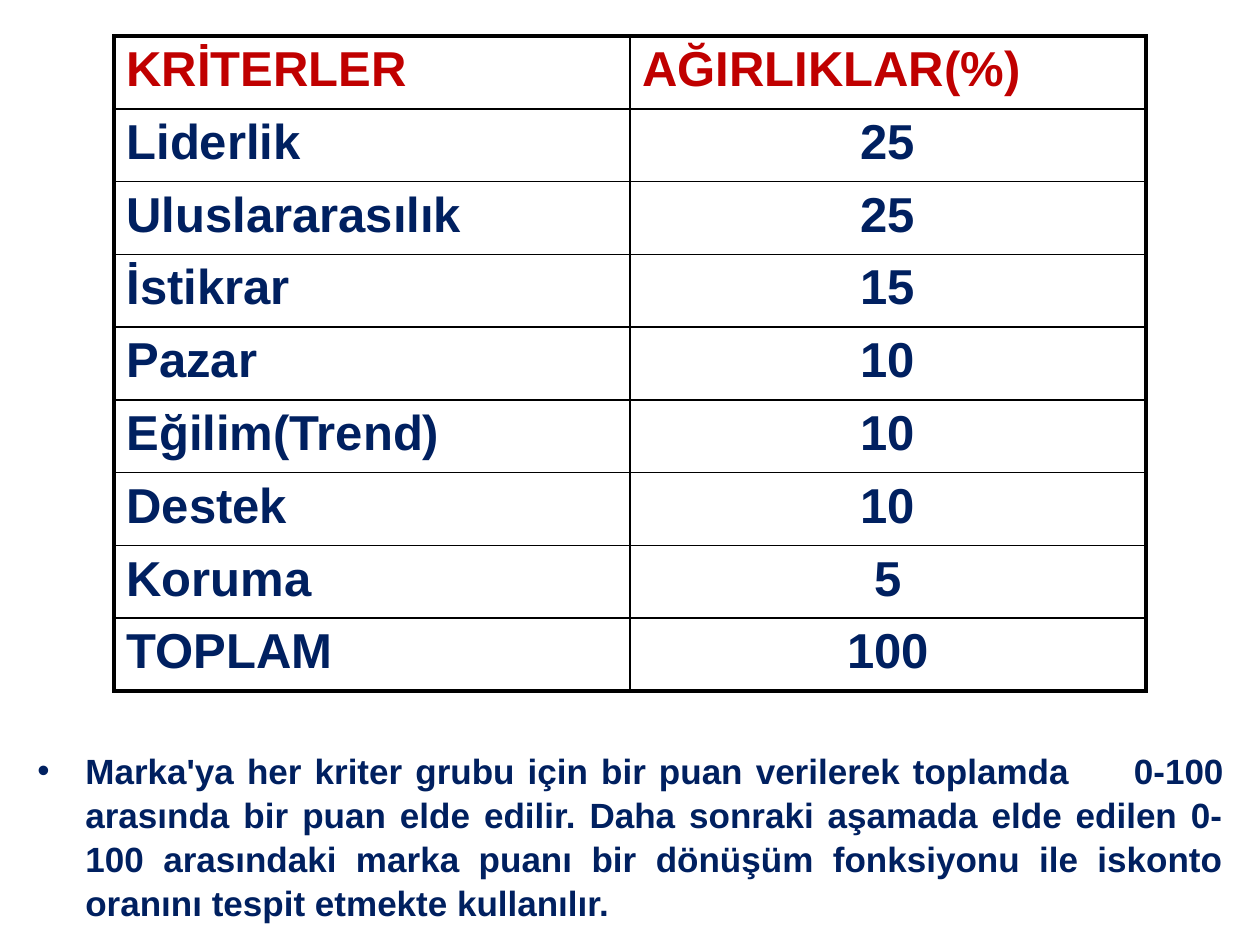
from lxml.etree import SubElement
from pptx import Presentation
from pptx.dml.color import RGBColor
from pptx.enum.text import MSO_ANCHOR, PP_ALIGN as Align
from pptx.oxml.ns import qn
from pptx.util import Pt

PX = 914400 // 126
NAVY = RGBColor(0x00, 0x20, 0x60)
RED = RGBColor(0xC0, 0x00, 0x00)
BLACK = RGBColor(0x00, 0x00, 0x00)
THIN, THICK = Pt(1), Pt(2.25)

CRITERIA = [
    ("KRİTERLER", "AĞIRLIKLAR(%)"),
    ("Liderlik", "25"),
    ("Uluslararasılık", "25"),
    ("İstikrar", "15"),
    ("Pazar", "10"),
    ("Eğilim(Trend)", "10"),
    ("Destek", "10"),
    ("Koruma", "5"),
    ("TOPLAM", "100"),
]
NOTE = [
    "Marka'ya her kriter grubu için bir puan verilerek toplamda",
    " ",
    "0-100 arasında bir puan elde edilir. Daha sonraki aşamada elde edilen "
    "0-100 arasındaki marka puanı bir dönüşüm fonksiyonu ile iskonto oranını "
    "tespit etmekte kullanılır.",
]


def add_span(para, text, size, color):
    span = para.add_run()
    span.text = text
    values = {"name": "Arial", "size": Pt(size), "bold": True}
    for name, value in values.items():
        setattr(span.font, name, value)
    span.font.color.rgb = color
    return span


def set_border(cell, side, width):
    """Draw one cell edge; side is L, R, T or B."""
    line = SubElement(cell._tc.get_or_add_tcPr(), qn(f"a:ln{side}"), w=str(width))
    fill = SubElement(line, qn("a:solidFill"))
    SubElement(fill, qn("a:srgbClr"), val=str(BLACK))


deck = Presentation()
deck.slide_width, deck.slide_height = 1260 * PX, 945 * PX
page = deck.slides.add_slide(deck.slide_layouts[6])

# Criteria and their weights
last_row = len(CRITERIA) - 1
table = page.shapes.add_table(
    len(CRITERIA), 2, 114 * PX, 36 * PX, 1032 * PX, 655 * PX).table
table.first_row = table.horz_banding = False
for row, texts in enumerate(CRITERIA):
    for column, text in enumerate(texts):
        cell = table.cell(row, column)
        outer_edges = {"L": column == 0, "R": column == 1,
                       "T": row == 0, "B": row == last_row}
        for side, is_outer in outer_edges.items():
            set_border(cell, side, THICK if is_outer else THIN)
        cell.fill.background()
        para = cell.text_frame.paragraphs[0]
        para.alignment = Align.CENTER if row and column else Align.LEFT
        add_span(para, text, 28, NAVY if row else RED)

# Explanation below the table
box = page.shapes.add_textbox(25 * PX, 741 * PX, 1211 * PX, 169 * PX)
frame = box.text_frame
frame.word_wrap = True
frame.vertical_anchor = MSO_ANCHOR.TOP
para = frame.paragraphs[0]
para.alignment = Align.JUSTIFY
para.line_spacing = 1.05
properties = para._p.get_or_add_pPr()
properties.set("marL", str(48 * PX))
properties.set("indent", str(-48 * PX))
SubElement(properties, qn("a:buFont"), typeface="Arial")
SubElement(properties, qn("a:buChar"), char="•")
before, gap, after = [add_span(para, text, 20, NAVY) for text in NOTE]
gap.font._element.set("spc", "2900")  # one wide space before the score range

deck.save("out.pptx")
